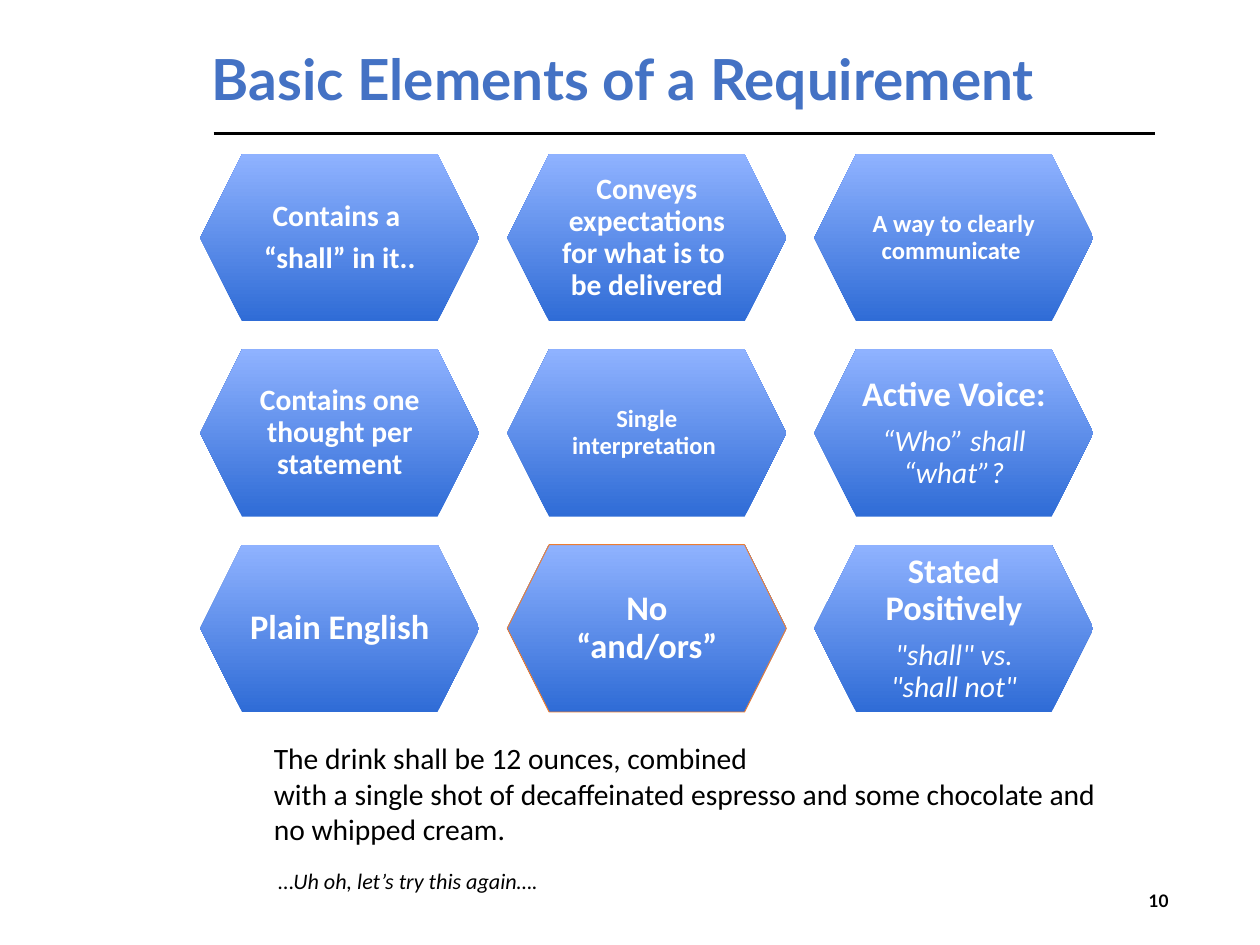
from lxml import etree
from pptx import Presentation
from pptx.dml.color import RGBColor
from pptx.enum.shapes import MSO_CONNECTOR, MSO_SHAPE
from pptx.enum.text import MSO_ANCHOR, MSO_AUTO_SIZE, PP_ALIGN
from pptx.oxml.ns import qn
from pptx.util import Inches, Pt

HEXAGON = MSO_SHAPE.HEXAGON
STRAIGHT = MSO_CONNECTOR.STRAIGHT
MIDDLE, TOP = MSO_ANCHOR.MIDDLE, MSO_ANCHOR.TOP
LEFT, CENTER, RIGHT = PP_ALIGN.LEFT, PP_ALIGN.CENTER, PP_ALIGN.RIGHT
NO_FIT = MSO_AUTO_SIZE.NONE

# Content
TITLE = "Basic Elements of a Requirement"
# Each element: heading size, heading lines, optional italic example
ELEMENTS = [
    (24, ["Contains a ", "“shall” in it.."], None),
    (24, ["Conveys expectations for what is to  be delivered"], None),
    (20, ["A way to clearly communicate "], None),
    (24, ["Contains one thought per statement"], None),
    (20, ["Single interpretation "], None),
    (28, ["Active Voice:"], "“Who” shall “what”?"),
    (28, ["Plain English"], None),
    (28, ["No “and/ors”"], None),
    (28, ["Stated Positively"], "\"shall\" vs. \"shall not\""),
]
OUTLINED = 7
EXAMPLE = [
    "The drink shall be 12 ounces, combined",
    "with a single shot of decaffeinated espresso and some chocolate and",
    "no whipped cream.",
]
REACTION = ("…", "Uh oh, let’s try this again….")
PAGE = "10"

# Layout and style
SLIDE_W, SLIDE_H = 14.22, 10.67
COLUMNS = 3
GRID_X, GRID_Y = 2.26, 1.74
HEX_W, HEX_H = 3.15, 1.89
GAP = HEX_W / 10
EXAMPLE_X = 3.04
EXAMPLE_SIZE = 24
HEADING_FONT, BODY_FONT = "Lato", "Calibri"
BLUE, DARK, LIGHT = "4472C4", "2F6CD6", "8FB2FF"
ORANGE, BLACK, WHITE = "ED7D31", "000000", "FFFFFF"


def color(hex_code):
    return RGBColor.from_string(hex_code)


def set_frame(frame, inset_x, inset_y, anchor):
    frame.word_wrap = True
    frame.auto_size = NO_FIT
    frame.vertical_anchor = anchor
    frame.margin_left = frame.margin_right = Inches(inset_x)
    frame.margin_top = frame.margin_bottom = Inches(inset_y)


def write(frame, paragraphs, font, hex_code, align=LEFT, spacing=None, before=0):
    """Each paragraph is a list of (text, size, bold, italic) runs."""
    for index, runs in enumerate(paragraphs):
        paragraph = frame.add_paragraph() if index else frame.paragraphs[0]
        paragraph.alignment = align
        if spacing:
            paragraph.line_spacing = spacing
        if index and before:
            paragraph.space_before = Pt(before)
        for text, size, bold, italic in runs:
            run = paragraph.add_run()
            run.text = text
            run.font.name = font
            run.font.size = Pt(size)
            run.font.bold = bold
            run.font.italic = italic
            run.font.color.rgb = color(hex_code)


def add_text(slide, box, paragraphs, font=BODY_FONT, align=LEFT,
             inset_x=0.05, anchor=TOP):
    frame = slide.shapes.add_textbox(*map(Inches, box)).text_frame
    set_frame(frame, inset_x, 0.05, anchor)
    write(frame, paragraphs, font, BLACK, align)


def add_element(slide, index, size, heading, example):
    row, column = divmod(index, COLUMNS)
    hexagon = slide.shapes.add_shape(
        HEXAGON,
        Inches(GRID_X + column * (HEX_W + GAP)),
        Inches(GRID_Y + row * (HEX_H + GAP)),
        Inches(HEX_W), Inches(HEX_H))
    hexagon.shadow.inherit = False
    hexagon.fill.gradient()
    hexagon.fill.gradient_angle = 90
    for stop, shade in zip(hexagon.fill.gradient_stops, (DARK, LIGHT)):
        stop.color.rgb = color(shade)
    if index == OUTLINED:
        hexagon.line.color.rgb = color(ORANGE)
        hexagon.line.width = Pt(0.75)
    else:
        hexagon.line.fill.background()

    paragraphs = [[(line, size, True, False)] for line in heading]
    if example:
        paragraphs.append([(example, EXAMPLE_SIZE, False, True)])
    inset = round(size / 240, 2)
    set_frame(hexagon.text_frame, inset, inset, MIDDLE)
    write(hexagon.text_frame, paragraphs, BODY_FONT, WHITE, CENTER,
          spacing=0.9, before=0.35 * size)


def main():
    deck = Presentation()
    deck.slide_width, deck.slide_height = Inches(SLIDE_W), Inches(SLIDE_H)
    slide = deck.slides.add_slide(deck.slide_layouts[5])

    # Title and the rule under it
    title = slide.shapes.title
    title.left, title.top = Inches(2.34), Inches(0.39)
    title.width, title.height = Inches(10.75), Inches(1.08)
    set_frame(title.text_frame, 0.05, 0.05, MIDDLE)
    write(title.text_frame, [[(TITLE, 46, True, False)]], HEADING_FONT, BLUE,
          spacing=0.9)
    rule = slide.shapes.add_connector(
        STRAIGHT, Inches(2.41), Inches(1.51), Inches(13.04), Inches(1.51))
    rule.line.color.rgb = color(BLACK)
    rule.line.width = Pt(2)
    etree.SubElement(rule._element.spPr, qn("a:effectLst"))

    # Grid of elements
    for index, element in enumerate(ELEMENTS):
        add_element(slide, index, *element)

    # Example, reaction and page number
    add_text(slide, (EXAMPLE_X, 8.31, 9.59, 1.31),
             [[(line, EXAMPLE_SIZE, False, False)] for line in EXAMPLE])
    dots, remark = REACTION
    add_text(slide, (EXAMPLE_X, 9.74, 7.11, 0.4),
             [[(dots, 18, False, False), (remark, 18, False, True)]],
             inset_x=0.1)
    add_text(slide, (12.88, 10, 0.36, 0.34), [[(PAGE, 14, True, False)]],
             HEADING_FONT, RIGHT, anchor=MIDDLE)

    deck.save("out.pptx")


if __name__ == "__main__":
    main()
